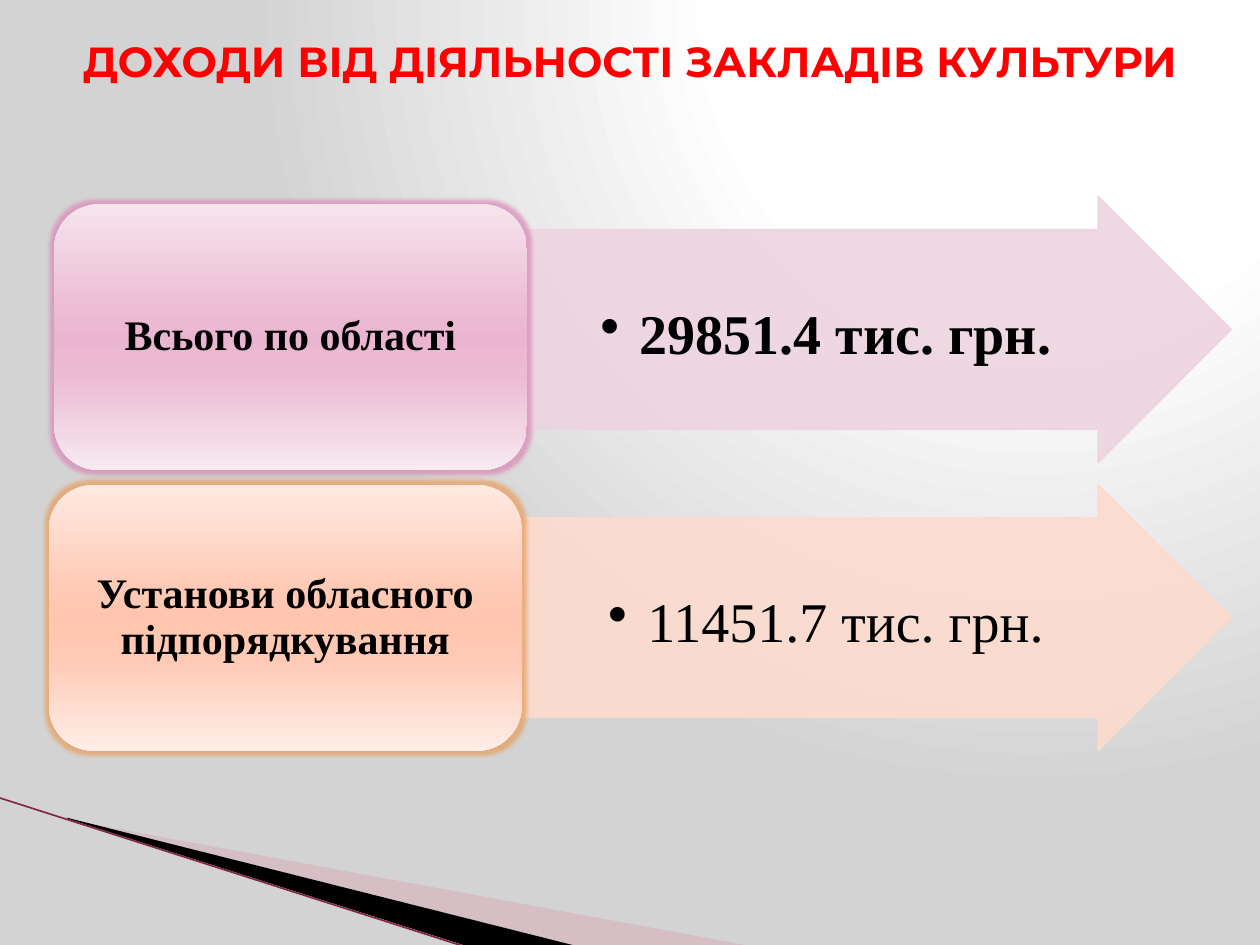
from lxml.etree import SubElement
from pptx import Presentation
from pptx.dml.color import RGBColor
from pptx.enum.shapes import MSO_CONNECTOR, MSO_SHAPE
from pptx.enum.text import MSO_ANCHOR, PP_ALIGN
from pptx.oxml.ns import qn
from pptx.util import Pt

COLORS = {
    "title": "FF0000", "text": "000000", "wedge": "000000",
    "pale_wedge": "D8A3AF", "edge": "85274A",
}
ROWS = [
    {"label": "Всього по області", "value": "29851.4 тис. грн.", "bold": True,
     "arrow_top": 112.3, "card": (31, 116.6), "arrow": "EDD4E0", "glow": "D98CB8",
     "stops": [(0, "F6E4EC"), (40, "ECBCD3"), (50, "EAB5D0"), (65, "ECBCD3"), (100, "F8EAF0")]},
    {"label": "Установи обласного підпорядкування", "value": "11451.7 тис. грн.", "bold": False,
     "arrow_top": 277, "card": (28, 277), "arrow": "FDDBCE", "glow": "E8A062",
     "stops": [(0, "FFE9E1"), (40, "FFCAB5"), (50, "FFC5AE"), (65, "FFCAB5"), (100, "FFEDE7")]},
]


def set_gradient(fill, parent, stops):
    fill.gradient()
    gradient = parent.find(".//" + qn("a:gradFill"))
    for child in list(gradient):
        gradient.remove(child)
    stop_list = SubElement(gradient, qn("a:gsLst"))
    for position, color in stops:
        stop = SubElement(stop_list, qn("a:gs"), pos=str(position * 1000))
        SubElement(stop, qn("a:srgbClr"), val=color)
    return gradient


def add_text(left, top, width, height, text, size, font, color, bold):
    box = page.shapes.add_textbox(Pt(left), Pt(top), Pt(width), Pt(height))
    frame = box.text_frame
    frame.word_wrap = True
    frame.vertical_anchor = MSO_ANCHOR.MIDDLE
    para = frame.paragraphs[0]
    para.alignment = PP_ALIGN.CENTER
    span = para.add_run()
    span.text = text
    span.font.size = Pt(size)
    span.font.name = font
    span.font.bold = bold
    span.font.color.rgb = RGBColor.from_string(color)
    return frame, para


deck = Presentation()
deck.slide_width, deck.slide_height = Pt(720), Pt(540)
page = deck.slides.add_slide(deck.slide_layouts[6])

backdrop = set_gradient(page.background.fill, page.element,
                        [(0, "FFFFFF"), (40, "FFFFFF"), (100, "D3D3D3")])
circle = SubElement(backdrop, qn("a:path"))
circle.set("path", "circle")
SubElement(circle, qn("a:fillToRect"), l="65000", t="0", r="0", b="98000")

wedges = [
    ("pale_wedge", 40, [(39.6, 468.5), (428.4, 540.5), (328.3, 540.5), (39.6, 468)]),
    ("wedge", 100, [(38.2, 467.3), (329, 540.5), (267.8, 541), (38.9, 468)]),
]
for name, opacity, points in wedges:
    builder = page.shapes.build_freeform(Pt(points[0][0]), Pt(points[0][1]))
    builder.add_line_segments([(Pt(x), Pt(y)) for x, y in points[1:]], close=True)
    wedge = builder.convert_to_shape()
    wedge.shadow.inherit = False
    wedge.fill.solid()
    wedge.fill.fore_color.rgb = RGBColor.from_string(COLORS[name])
    wedge.line.fill.background()
    color = wedge.element.spPr.find(".//" + qn("a:srgbClr"))
    SubElement(color, qn("a:alpha"), val=str(opacity * 1000))

edge = page.shapes.add_connector(MSO_CONNECTOR.STRAIGHT, Pt(-0.7), Pt(455.8), Pt(267), Pt(541.4))
edge.line.color.rgb = RGBColor.from_string(COLORS["edge"])
edge.line.width = Pt(0.95)
SubElement(edge.element.spPr, qn("a:effectLst"))

add_text(0, 16.6, 720, 36, "ДОХОДИ ВІД ДІЯЛЬНОСТІ ЗАКЛАДІВ КУЛЬТУРИ", 24,
         "Montserrat", COLORS["title"], True)

for row in ROWS:
    top = row["arrow_top"]
    arrow = page.shapes.add_shape(MSO_SHAPE.RIGHT_ARROW, Pt(298), Pt(top), Pt(405.5), Pt(152))
    arrow.adjustments[0], arrow.adjustments[1] = 0.75, 0.5
    arrow.shadow.inherit = False
    arrow.fill.solid()
    arrow.fill.fore_color.rgb = RGBColor.from_string(row["arrow"])
    arrow.line.color.rgb = RGBColor.from_string(row["arrow"])
    arrow.line.width = Pt(0.94)
    for color in arrow.element.spPr.iter(qn("a:srgbClr")):
        SubElement(color, qn("a:alpha"), val="90000")

    frame, para = add_text(298, top + 23, 348, 114, row["value"], 32, "Times New Roman",
                           COLORS["text"], row["bold"])
    frame.margin_left = frame.margin_right = frame.margin_top = frame.margin_bottom = Pt(1.5)
    para.line_spacing = 0.9
    properties = para._p.get_or_add_pPr()
    properties.set("marL", str(Pt(22.5)))
    properties.set("indent", str(Pt(-22.5)))
    SubElement(properties, qn("a:buChar"), char="•")

    left, card_top = row["card"]
    card = page.shapes.add_shape(MSO_SHAPE.ROUNDED_RECTANGLE, Pt(left), Pt(card_top), Pt(270), Pt(152))
    card.shadow.inherit = False
    card.line.fill.background()
    blend = set_gradient(card.fill, card.element.spPr, row["stops"])
    SubElement(blend, qn("a:lin"), ang="5400000", scaled="0")
    effects = card.element.spPr.find(qn("a:effectLst"))
    glow = SubElement(effects, qn("a:glow"), rad=str(Pt(5)))
    color = SubElement(glow, qn("a:srgbClr"), val=row["glow"])
    SubElement(color, qn("a:alpha"), val="75000")

    frame, para = add_text(left + 7.5, card_top + 7.5, 255, 137, row["label"], 24,
                           "Times New Roman", COLORS["text"], True)
    para.line_spacing = 0.9

deck.save("out.pptx")
